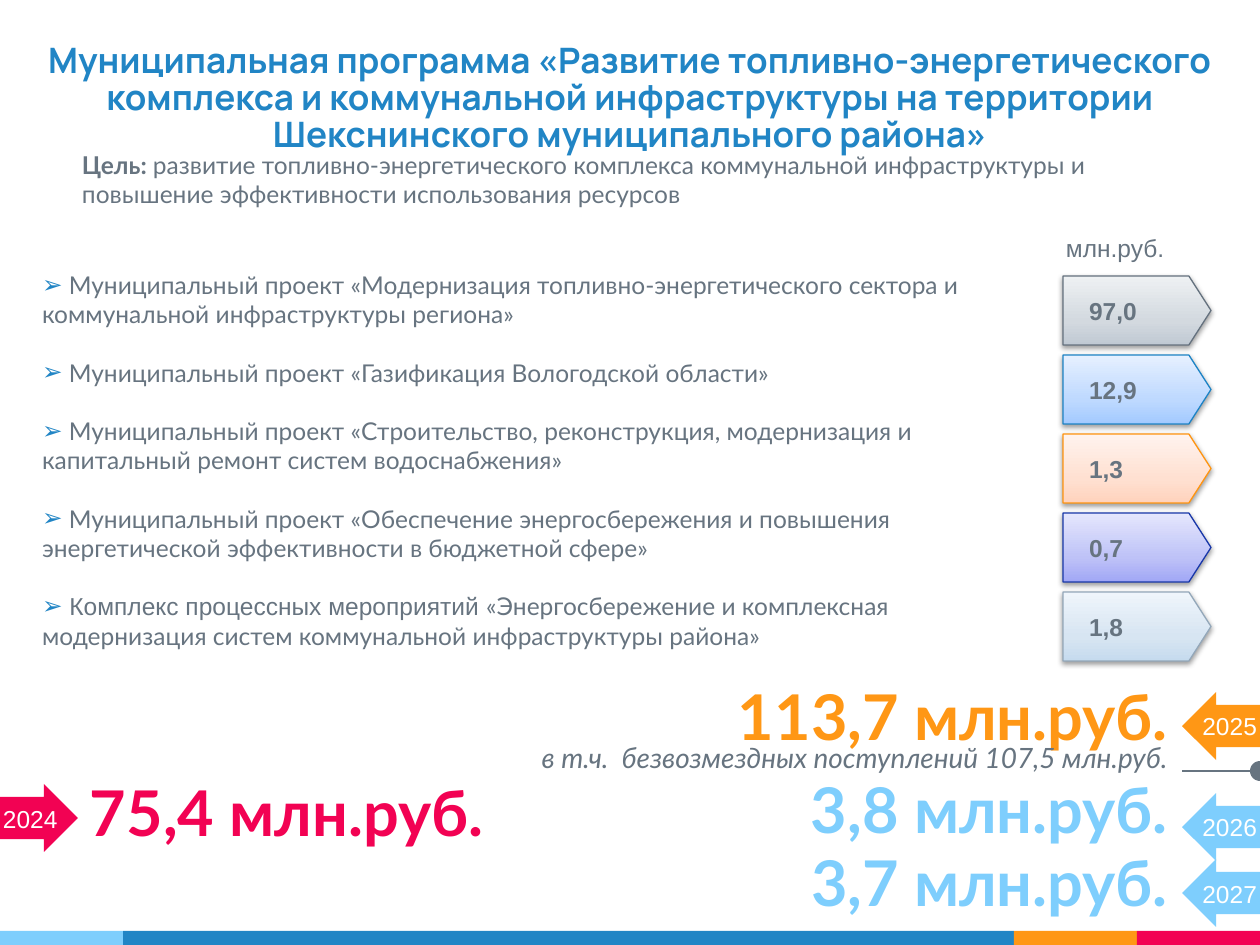
"""Build the slide on the municipal fuel, energy and utilities programme."""
from copy import deepcopy

from lxml import etree
from pptx import Presentation
from pptx.dml.color import RGBColor
from pptx.enum.shapes import MSO_CONNECTOR, MSO_SHAPE
from pptx.enum.text import MSO_ANCHOR, MSO_AUTO_SIZE, PP_ALIGN
from pptx.oxml.ns import qn
from pptx.util import Emu, Pt

RECTANGLE, ARROW = MSO_SHAPE.RECTANGLE, MSO_SHAPE.RIGHT_ARROW
PENTAGON, DOT = MSO_SHAPE.PENTAGON, MSO_SHAPE.FLOWCHART_CONNECTOR
STRAIGHT = MSO_CONNECTOR.STRAIGHT
LEFT, CENTER, RIGHT = PP_ALIGN.LEFT, PP_ALIGN.CENTER, PP_ALIGN.RIGHT
TOP, MIDDLE, BOTTOM = MSO_ANCHOR.TOP, MSO_ANCHOR.MIDDLE, MSO_ANCHOR.BOTTOM
NO_AUTOFIT = MSO_AUTO_SIZE.NONE

BLUE = RGBColor(0x21, 0x85, 0xC5)
SKY = RGBColor(0x7E, 0xCE, 0xFD)
ORANGE = RGBColor(0xFF, 0x97, 0x15)
CRIMSON = RGBColor(0xF2, 0x02, 0x53)
GRAY = RGBColor(0x67, 0x74, 0x80)
WHITE = RGBColor(0xFF, 0xFF, 0xFF)
BLACK = RGBColor(0x00, 0x00, 0x00)
SCALE = 914400 / 126


def px(*lengths):
    """Turn pixel lengths into EMU."""
    return [Emu(round(length * SCALE)) for length in lengths]


def write(frame, text, font="Lato", size=14, color=GRAY, bold=False, italic=False,
          align=LEFT, anchor=TOP, insets=(13, 13, 13, 13), wrap=True, new=False):
    """Add formatted text to the last or a new paragraph and return that paragraph."""
    frame.auto_size = NO_AUTOFIT
    frame.word_wrap = wrap
    frame.vertical_anchor = anchor
    (frame.margin_left, frame.margin_top,
     frame.margin_right, frame.margin_bottom) = px(*insets)
    paragraph = frame.add_paragraph() if new else frame.paragraphs[-1]
    paragraph.alignment = align
    for number, line in enumerate(text.split("\n")):
        if number:
            paragraph.add_line_break()
        run = paragraph.add_run()
        run.text = line
        run.font.name = font
        run.font.size = Pt(size)
        run.font.bold = bold
        run.font.italic = italic
        run.font.color.rgb = color
    return paragraph


presentation = Presentation()
presentation.slide_width, presentation.slide_height = px(1260, 945)
slide = presentation.slides.add_slide(presentation.slide_layouts[1])
shapes = slide.shapes

title = shapes.title
title.left, title.top, title.width, title.height = px(0, 20, 1260, 148)
paragraph = write(
    title.text_frame,
    "Муниципальная программа «Развитие топливно-энергетического комплекса "
    "и коммунальной инфраструктуры на территории Шекснинского муниципального района»",
    font="Manrope", size=20, color=BLUE, bold=True, align=CENTER, anchor=BOTTOM)
paragraph.line_spacing = 0.88

goal = slide.placeholders[1]
goal.left, goal.top, goal.width, goal.height = px(69, 137, 1123, 137)
write(goal.text_frame, "Цель: ", bold=True)
paragraph = write(
    goal.text_frame,
    "развитие топливно-энергетического комплекса коммунальной инфраструктуры "
    "и повышение эффективности использования ресурсов")
properties = paragraph._p.get_or_add_pPr()
properties.set("marL", "0")
properties.set("indent", "0")
etree.SubElement(properties, qn("a:buNone"))

projects = [
    ("", " Муниципальный проект «Модернизация топливно-энергетического сектора и\n"
         "коммунальной инфраструктуры региона»"),
    ("", " Муниципальный проект «Газификация Вологодской области»"),
    ("", " Муниципальный проект «Строительство, реконструкция, модернизация и\n"
         "капитальный ремонт систем водоснабжения»"),
    ("", " Муниципальный проект «Обеспечение энергосбережения и повышения\n"
         "энергетической эффективности в бюджетной сфере»"),
    (" Комплекс процессных мероприятий ",
     "«Энергосбережение и комплексная\n"
     "модернизация систем коммунальной инфраструктуры района»"),
]
project_frame = shapes.add_textbox(*px(29, 217, 1231, 650)).text_frame
for index, (lead, text) in enumerate(projects):
    if lead:
        write(project_frame, lead, font="Arial", new=True)
    paragraph = write(project_frame, text, insets=(13, 53, 13, 13),
                      new=index > 0 and not lead)
    paragraph.space_before = Pt(16.5 if index else 0)
    properties = paragraph._p.get_or_add_pPr()
    bullet_color = etree.SubElement(properties, qn("a:buClr"))
    etree.SubElement(bullet_color, qn("a:srgbClr"), val=str(BLUE))
    etree.SubElement(properties, qn("a:buFont"), typeface="Arial")
    etree.SubElement(properties, qn("a:buChar"), char="➢")

solid_shapes = [
    (RECTANGLE, (0, 931, 123, 14), SKY, 0),
    (RECTANGLE, (123, 931, 891, 14), BLUE, 0),
    (RECTANGLE, (1014, 931, 123, 14), ORANGE, 0),
    (RECTANGLE, (1137, 931, 123, 14), CRIMSON, 0),
    (ARROW, (0, 784, 78, 68), CRIMSON, 0),
    (ARROW, (1182, 692, 78, 68), ORANGE, 180),
    (ARROW, (1182, 793, 78, 68), SKY, 180),
    (ARROW, (1182, 859, 78, 68), SKY, 180),
    (DOT, (1250, 761, 20, 20), GRAY, 0),
]
for kind, box, color, rotation in solid_shapes:
    shape = shapes.add_shape(kind, *px(*box))
    shape.shadow.inherit = False
    shape.fill.solid()
    shape.fill.fore_color.rgb = color
    shape.line.fill.background()
    shape.rotation = rotation
    if kind == ARROW:
        shape.adjustments[0] = 0.62
        shape.adjustments[1] = 0.5

connector = shapes.add_connector(STRAIGHT, *px(1261, 771, 1182, 771))
connector.line.color.rgb = GRAY
connector.line.width = Pt(0.75)
etree.SubElement(connector._element.spPr, qn("a:effectLst"))

amounts = [
    ("75,4 млн.руб.", (77, 738, 475, 124), CRIMSON, LEFT),
    ("113,7 млн.руб.", (699, 643, 482, 123), ORANGE, RIGHT),
    ("3,8 млн.руб.", (679, 738, 502, 121), SKY, RIGHT),
    ("3,7 млн.руб.", (709, 839, 472, 93), SKY, RIGHT),
]
for text, box, color, align in amounts:
    frame = shapes.add_textbox(*px(*box)).text_frame
    write(frame, text, size=36, color=color, bold=True, align=align, anchor=BOTTOM)

grants = shapes.add_textbox(*px(314, 728, 867, 64))
write(grants.text_frame, "в т.ч.  безвозмездных поступлений 107,5 млн.руб.",
      size=16, italic=True, align=RIGHT)

years = [("2024", -10, 798, LEFT), ("2025", 1189, 705, RIGHT),
         ("2026", 1189, 806, RIGHT), ("2027", 1189, 873, RIGHT)]
for year, left, top, align in years:
    frame = shapes.add_textbox(*px(left, top, 81, 42)).text_frame
    write(frame, year, font="Arial", color=WHITE, align=align,
          insets=(13, 6, 13, 6), wrap=False)

unit = shapes.add_textbox(*px(1053, 227, 147, 42))
write(unit.text_frame, "млн.руб.", font="Arial", insets=(13, 6, 13, 6))

tags = [
    ("97,0", "64717E", ("C0C9D3", "D3D9DF", "EEF1F3")),
    ("12,9", "1C83C5", ("A3CAFF", "BED9FF", "E6F0FF")),
    ("1,3", "FF940F", ("FFD3BD", "FFE0D1", "FFF3EE")),
    ("0,7", "1837A9", ("A1A7F6", "BEC2F7", "E5E7FD")),
    ("1,8", "93A7B9", ("C6DBEE", "D7E5F2", "EFF5FB")),
]
for index, (value, outline, gradient) in enumerate(tags):
    tag = shapes.add_shape(PENTAGON, *px(1063, 276 + index * 79, 148, 69))
    tag.adjustments[0] = 0.32
    tag.line.color.rgb = RGBColor.from_string(outline)
    tag.line.width = Pt(0.75)
    tag.fill.gradient()
    tag.fill.gradient_angle = 90
    stop_list = tag._element.spPr.find(qn("a:gradFill")).find(qn("a:gsLst"))
    stop_list.insert(1, deepcopy(stop_list[0]))
    for stop, position, color in zip(tag.fill.gradient_stops, (0, 0.35, 1), gradient):
        stop.position = position
        stop.color.rgb = RGBColor.from_string(color)
    tag.shadow.inherit = False
    effects = tag._element.spPr.find(qn("a:effectLst"))
    shadow = etree.SubElement(effects, qn("a:outerShdw"), blurRad="40000",
                              dist="20000", dir="5400000", rotWithShape="0")
    shadow_color = etree.SubElement(shadow, qn("a:srgbClr"), val=str(BLACK))
    etree.SubElement(shadow_color, qn("a:alpha"), val="38000")
    write(tag.text_frame, value, font="Arial", bold=True, anchor=MIDDLE,
          insets=(26, 13, 13, 13))

presentation.save("out.pptx")
